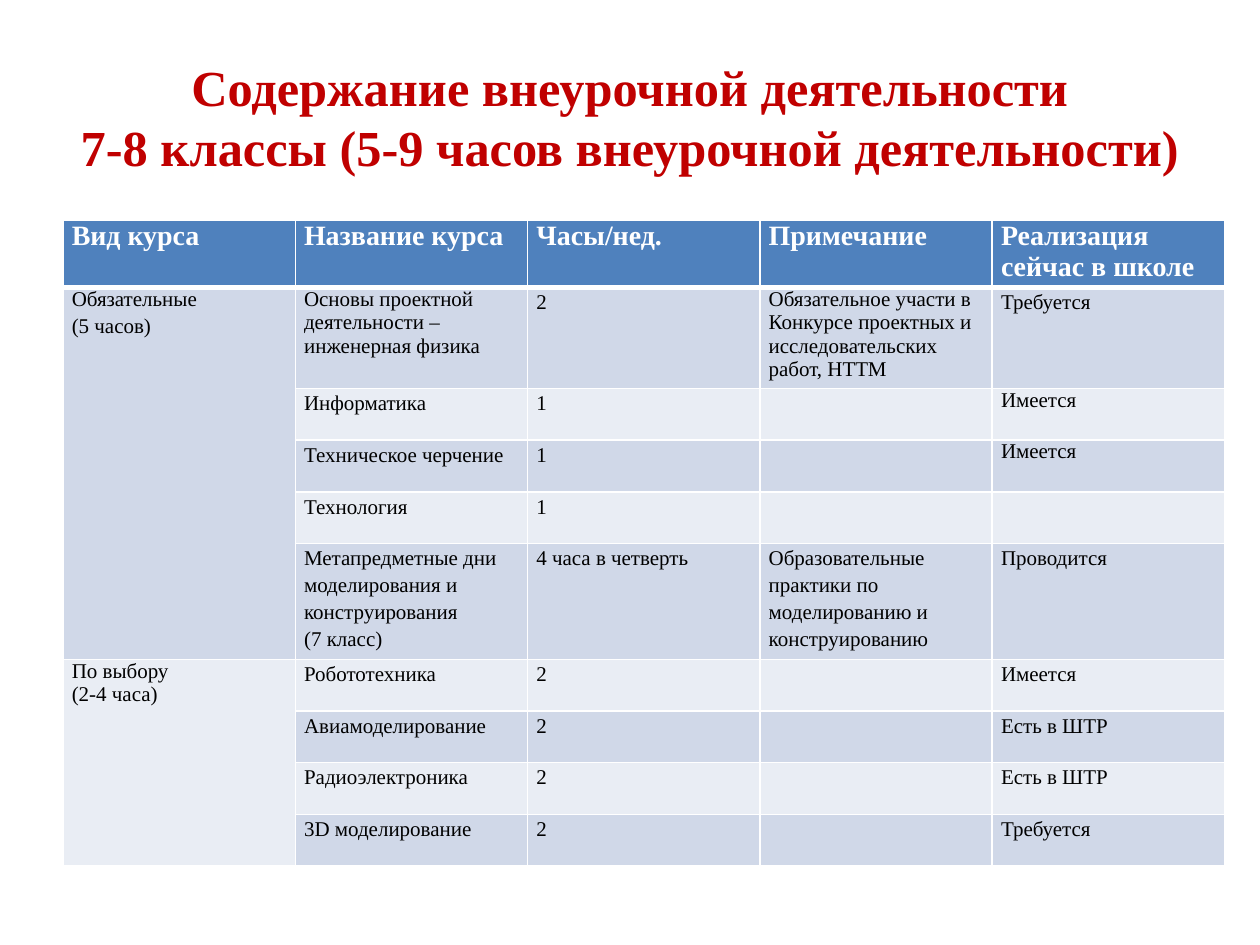
from lxml import etree
from pptx import Presentation
from pptx.dml.color import RGBColor
from pptx.enum.text import MSO_ANCHOR as ANCHOR, PP_ALIGN as ALIGN
from pptx.oxml.ns import qn
from pptx.util import Inches, Pt

FONT = "Times New Roman"
RED = RGBColor(0xC0, 0x00, 0x00)
BLUE = RGBColor(0x4F, 0x81, 0xBD)
BAND_DARK = RGBColor(0xD0, 0xD8, 0xE8)
BAND_LIGHT = RGBColor(0xE9, 0xED, 0xF4)
WHITE = RGBColor(0xFF, 0xFF, 0xFF)
BLACK = RGBColor(0x00, 0x00, 0x00)

TITLE = "Содержание внеурочной деятельности\v7-8 классы (5-9 часов внеурочной деятельности)"
HEADER = ["Вид курса", "Название курса", "Часы/нед.", "Примечание", "Реализация сейчас в школе"]
# Each group: kind of course, then its courses
GROUPS = [
    ("Обязательные\n(5 часов)", [
        ("Основы проектной деятельности – инженерная физика", "2",
         "Обязательное участи в Конкурсе проектных и исследовательских работ, НТТМ", "Требуется"),
        ("Информатика", "1", "", "Имеется"),
        ("Техническое черчение", "1", "", "Имеется"),
        ("Технология", "1", "", ""),
        ("Метапредметные дни моделирования и конструирования\n(7 класс)", "4 часа в четверть",
         "Образовательные практики по моделированию и конструированию", "Проводится"),
    ]),
    ("По выбору\n(2-4 часа)", [
        ("Робототехника", "2", "", "Имеется"),
        ("Авиамоделирование", "2", "", "Есть в ШТР"),
        ("Радиоэлектроника", "2", "", "Есть в ШТР"),
        ("3D моделирование", "2", "", "Требуется"),
    ]),
]
ROW_HEIGHT = 0.41
TALL_ROWS = {0: 0.49, 1: 0.74, 5: 0.85}
# (row, column): how many leading paragraphs are single spaced
SINGLE_SPACED = {(1, 0): 1, (1, 1): 1, (1, 3): 1, (2, 4): 1, (3, 4): 1, (6, 0): 2}


def write_text(tf, text, size=12, color=BLACK, bold=False, align=ALIGN.LEFT,
               spacing=1.0, single=0):
    """Fill a text frame; the first `single` paragraphs keep single spacing."""
    for i, line in enumerate(text.split("\n")):
        p = tf.paragraphs[0] if i == 0 else tf.add_paragraph()
        p.text = line
        p.alignment = align
        p.line_spacing = 1.0 if i < single else spacing
        p.font.size = Pt(size)
        for r in p.runs:
            r.font.name = FONT
            r.font.size = Pt(size)
            r.font.bold = bold
            r.font.color.rgb = color


def set_borders(cell, bottom=1, top=1):
    tc_pr = cell._tc.get_or_add_tcPr()
    widths = {"a:lnL": 1, "a:lnR": 1, "a:lnT": top, "a:lnB": bottom}
    for i, (tag, width) in enumerate(widths.items()):
        ln = etree.Element(qn(tag), w=str(Pt(width)))
        fill = etree.SubElement(ln, qn("a:solidFill"))
        etree.SubElement(fill, qn("a:srgbClr"), val=str(WHITE))
        tc_pr.insert(i, ln)


def format_cell(cell, text, fill, bottom=1, top=1, **text_format):
    cell.margin_left = cell.margin_right = Inches(0.07)
    cell.margin_top = cell.margin_bottom = 0
    cell.fill.solid()
    cell.fill.fore_color.rgb = fill
    set_borders(cell, bottom, top)
    write_text(cell.text_frame, text, **text_format)


def add_title(slide, left, top, width, height):
    tf = slide.shapes.add_textbox(left, top, width, height).text_frame
    tf.word_wrap = True
    tf.vertical_anchor = ANCHOR.MIDDLE
    write_text(tf, TITLE, size=28.8, color=RED, bold=True, align=ALIGN.CENTER)


def add_course_table(slide, left, top, width):
    n_rows = 1 + sum(len(courses) for _, courses in GROUPS)
    heights = [Inches(TALL_ROWS.get(i, ROW_HEIGHT)) for i in range(n_rows)]
    table = slide.shapes.add_table(n_rows, len(HEADER), left, top, width, sum(heights)).table
    table.horz_banding = False
    for row, height in zip(table.rows, heights):
        row.height = height

    # Header
    for c, text in enumerate(HEADER):
        format_cell(table.cell(0, c), text, BLUE, bottom=3, size=16, color=WHITE, bold=True)

    # Body: the first column is merged over each group
    row = 1
    for kind, courses in GROUPS:
        first = row
        for course in courses:
            fill = BAND_DARK if row % 2 else BAND_LIGHT
            for c, text in enumerate((kind if row == first else "",) + course):
                if c == 0:
                    fill_here = BAND_DARK if first % 2 else BAND_LIGHT
                else:
                    fill_here = fill
                format_cell(table.cell(row, c), text, fill_here, top=3 if row == 1 else 1,
                            spacing=1.15, single=SINGLE_SPACED.get((row, c), 0))
            row += 1
        table.cell(first, 0).merge(table.cell(row - 1, 0))


def main():
    prs = Presentation()
    prs.slide_width, prs.slide_height = Inches(10), Inches(7.5)
    slide = prs.slides.add_slide(prs.slide_layouts[6])
    add_title(slide, Inches(0.5), Inches(0.3), Inches(9), Inches(1.25))
    add_course_table(slide, Inches(0.5), Inches(1.75), Inches(9.22))
    prs.save("out.pptx")


if __name__ == "__main__":
    main()
